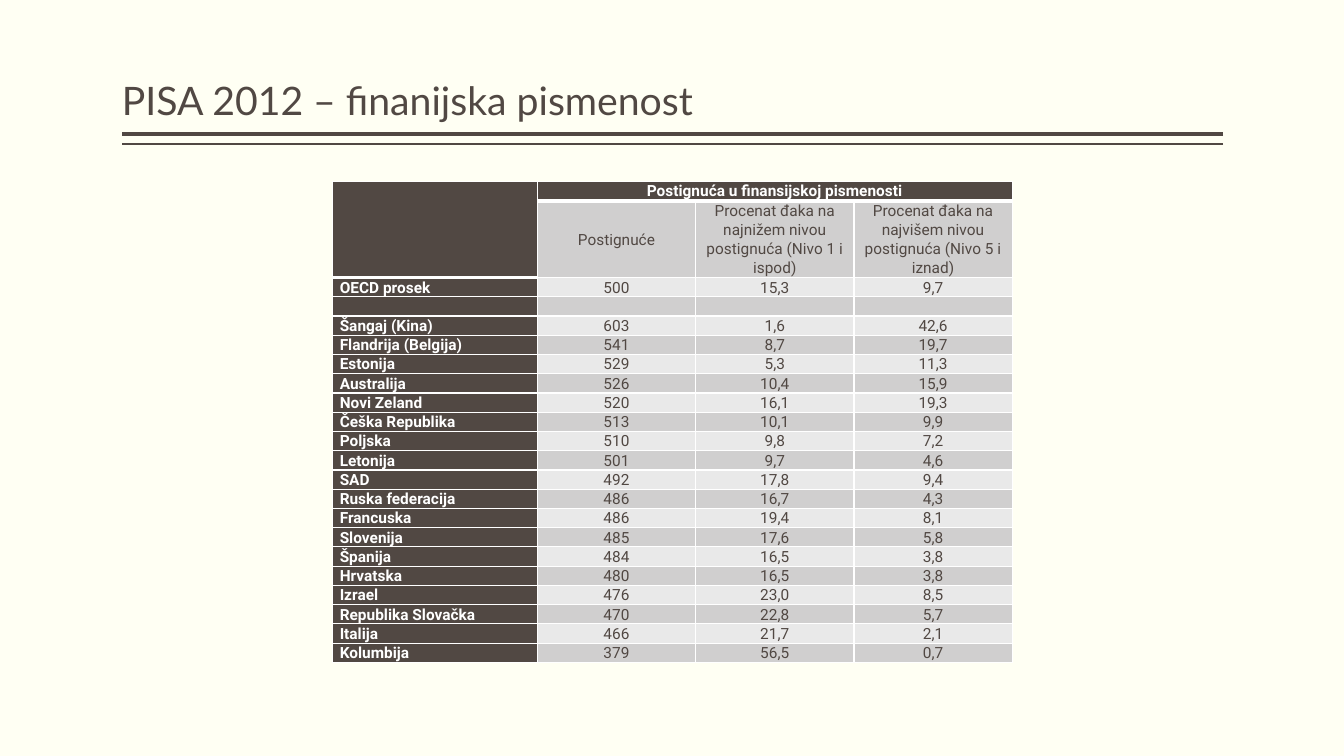
from dataclasses import dataclass

from lxml.etree import SubElement
from pptx import Presentation
from pptx.dml.color import RGBColor
from pptx.enum.shapes import MSO_CONNECTOR
from pptx.enum.text import MSO_ANCHOR, MSO_AUTO_SIZE, PP_ALIGN
from pptx.oxml.ns import qn
from pptx.util import Emu, Pt

BROWN = RGBColor(0x51, 0x48, 0x43)
CREAM = RGBColor(0xFF, 0xFF, 0xF3)
WHITE = RGBColor(0xFF, 0xFF, 0xFF)
DARK_BAND = RGBColor(0xD0, 0xCF, 0xCF)
LIGHT_BAND = RGBColor(0xE9, 0xE9, 0xE9)

TITLE = "PISA 2012 – finanijska pismenost"
LEFT, RIGHT = 121, 1213
TABLE_LEFT, TABLE_TOP = 330, 180
COLUMN_WIDTHS = (203, 157, 157, 157)
ROW_HEIGHT, HEADING_HEIGHT = 19, 76
TEXT_SIZE = 11
CELL_MARGINS = {"margin_left": 7, "margin_right": 7, "margin_top": 0, "margin_bottom": 0}

ROWS = [
    ("", "Postignuća u finansijskoj pismenosti", "", ""),
    ("", "Postignuće",
     "Procenat đaka na najnižem nivou postignuća (Nivo 1 i ispod)",
     "Procenat đaka na najvišem nivou postignuća (Nivo 5 i iznad)"),
    ("OECD prosek", "500", "15,3", "9,7"),
    ("", "", "", ""),
    ("Šangaj (Kina)", "603", "1,6", "42,6"),
    ("Flandrija (Belgija)", "541", "8,7", "19,7"),
    ("Estonija", "529", "5,3", "11,3"),
    ("Australija", "526", "10,4", "15,9"),
    ("Novi Zeland", "520", "16,1", "19,3"),
    ("Češka Republika", "513", "10,1", "9,9"),
    ("Poljska", "510", "9,8", "7,2"),
    ("Letonija", "501", "9,7", "4,6"),
    ("SAD", "492", "17,8", "9,4"),
    ("Ruska federacija", "486", "16,7", "4,3"),
    ("Francuska", "486", "19,4", "8,1"),
    ("Slovenija", "485", "17,6", "5,8"),
    ("Španija", "484", "16,5", "3,8"),
    ("Hrvatska", "480", "16,5", "3,8"),
    ("Izrael", "476", "23,0", "8,5"),
    ("Republika Slovačka", "470", "22,8", "5,7"),
    ("Italija", "466", "21,7", "2,1"),
    ("Kolumbija", "379", "56,5", "0,7"),
]


@dataclass(frozen=True)
class Rule:
    y: int
    weight: int


RULES = (Rule(133, 3), Rule(143, 1))


def px(length: int) -> Emu:
    """Convert px, 100 to the inch, into EMU."""
    return Emu(length * 9144)


def set_all(target, values: dict) -> None:
    for name, value in values.items():
        setattr(target, name, value)


def write(para, text: str, color: RGBColor, values: dict) -> None:
    span = para.add_run()
    span.text = text
    set_all(span.font, values)
    span.font.color.rgb = color


def add_title(page) -> None:
    box = page.shapes.title
    set_all(box, {"left": px(LEFT), "top": px(8),
                  "width": px(RIGHT - LEFT), "height": px(120)})
    frame = box.text_frame
    set_all(frame, {"margin_left": 0, "margin_right": 0, "margin_top": px(5),
                    "margin_bottom": px(5), "vertical_anchor": MSO_ANCHOR.BOTTOM,
                    "word_wrap": True, "auto_size": MSO_AUTO_SIZE.NONE})
    para = frame.paragraphs[0]
    set_all(para, {"alignment": PP_ALIGN.LEFT, "line_spacing": 0.9})
    write(para, TITLE, BROWN, {"name": "Lato", "size": Pt(28)})


def add_rule(page, rule: Rule) -> None:
    line = page.shapes.add_connector(
        MSO_CONNECTOR.STRAIGHT, px(RIGHT), px(rule.y), px(LEFT), px(rule.y))
    line.line.color.rgb = BROWN
    line.line.width = Pt(rule.weight)
    SubElement(line._element.spPr, qn("a:effectLst"))


def bottom_weight(row: int, column: int) -> int:
    return 3 if row == 0 or (row, column) == (1, 0) else 1


def add_borders(cell, row: int, column: int) -> None:
    top = bottom_weight(row - 1, column) if row else 1
    weights = {"L": 1, "R": 1, "T": top, "B": bottom_weight(row, column)}
    properties = cell._tc.get_or_add_tcPr()
    for side, weight in weights.items():
        border = SubElement(properties, qn(f"a:ln{side}"), w=str(Pt(weight)))
        fill = SubElement(border, qn("a:solidFill"))
        SubElement(fill, qn("a:srgbClr"), val=str(WHITE))


def format_cell(cell, row: int, column: int, text: str) -> None:
    dark = row == 0 or column == 0
    add_borders(cell, row, column)
    cell.fill.solid()
    cell.fill.fore_color.rgb = BROWN if dark else (DARK_BAND if row % 2 else LIGHT_BAND)
    set_all(cell, {name: px(margin) for name, margin in CELL_MARGINS.items()})
    cell.vertical_anchor = MSO_ANCHOR.MIDDLE if row < 2 else MSO_ANCHOR.BOTTOM
    para = cell.text_frame.paragraphs[0]
    set_all(para, {"alignment": PP_ALIGN.CENTER if column else PP_ALIGN.LEFT,
                   "line_spacing": 1.07})
    if text:
        write(para, text, WHITE if dark else BROWN,
              {"name": "Roboto", "size": Pt(TEXT_SIZE), "bold": dark})
    else:
        end = SubElement(para._p, qn("a:endParaRPr"), sz=str(TEXT_SIZE * 100))
        SubElement(end, qn("a:latin"), typeface="Roboto")


def add_results(page) -> None:
    heights = [HEADING_HEIGHT if row == 1 else ROW_HEIGHT for row in range(len(ROWS))]
    table = page.shapes.add_table(
        len(ROWS), len(COLUMN_WIDTHS), px(TABLE_LEFT), px(TABLE_TOP),
        px(sum(COLUMN_WIDTHS)), px(sum(heights))).table
    set_all(table, {"first_row": True, "first_col": True, "horz_banding": True})
    for column, width in zip(table.columns, COLUMN_WIDTHS):
        column.width = px(width)
    for row, height in zip(table.rows, heights):
        row.height = px(height)
    for row, texts in enumerate(ROWS):
        for column, text in enumerate(texts):
            format_cell(table.cell(row, column), row, column, text)
    table.cell(0, 0).merge(table.cell(1, 0))
    table.cell(0, 1).merge(table.cell(0, 3))


def main() -> None:
    deck = Presentation()
    set_all(deck, {"slide_width": px(1333), "slide_height": px(750)})
    page = deck.slides.add_slide(deck.slide_layouts.get_by_name("Title Only"))
    page.background.fill.solid()
    page.background.fill.fore_color.rgb = CREAM
    for rule in RULES:
        add_rule(page, rule)
    add_title(page)
    add_results(page)
    deck.save("out.pptx")


if __name__ == "__main__":
    main()
